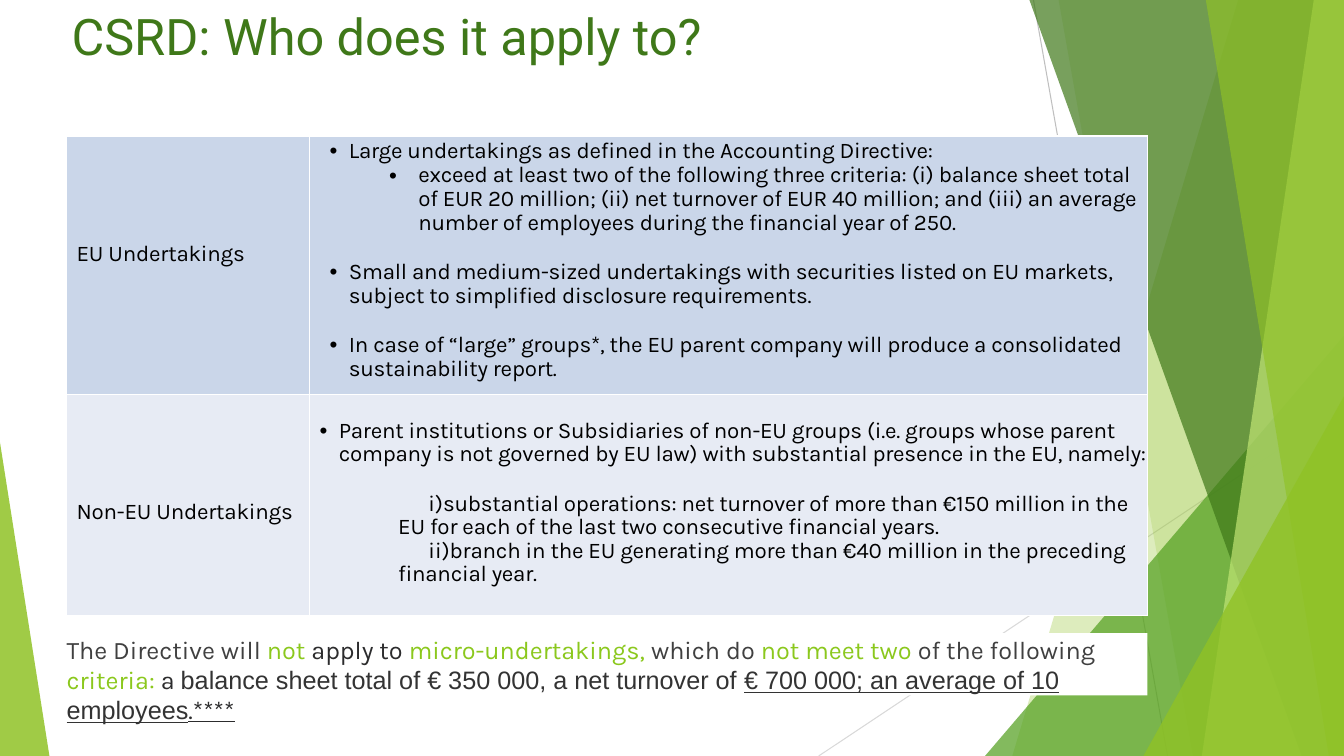
from dataclasses import dataclass

from lxml.etree import SubElement
from pptx import Presentation
from pptx.dml.color import RGBColor
from pptx.enum.shapes import MSO_CONNECTOR, MSO_SHAPE
from pptx.enum.text import MSO_ANCHOR, PP_ALIGN
from pptx.oxml.ns import qn
from pptx.util import Inches, Pt

WIDTH, HEIGHT = 13.33, 7.5
GREEN, DARK_GREEN, LIME = "90C226", "3F7819", "8BC81D"
GREY, CHARCOAL, SLATE = "404040", "2C2C2D", "333333"


@dataclass
class Ray:
    start: tuple[float, float]
    end: tuple[float, float]
    color: str


@dataclass
class Panel:
    """Band from a slanted left edge to the right side of the slide."""
    top_x: float
    bottom_x: float
    color: str
    opacity: int


@dataclass
class Wedge:
    """Triangle standing on the bottom of the slide."""
    left: float
    top: float
    width: float
    apex: float
    color: str
    opacity: int


@dataclass
class Item:
    text: str
    left: float = 0.1
    indent: float = 0
    before: float = 0
    line: float | None = None
    bullet: str = ""


@dataclass
class Cell:
    items: list[Item]
    top: float = 0
    bottom: float = 0
    anchor: MSO_ANCHOR = MSO_ANCHOR.TOP


@dataclass
class Span:
    text: str
    color: str
    font: str = "Karla"
    underline: bool = False


RAYS = [Ray((10.25, 0), (11.58, HEIGHT), "BFBFBF"),
        Ray((WIDTH, 4.03), (8.12, HEIGHT), "D9D9D9")]
DECORATION = [
    Panel(12.28, 10.04, GREEN, 30),
    Panel(10.5, 11.83, GREEN, 20),
    Wedge(9.77, 3.33, 3.56, 1, "54A021", 72),
    Panel(10.21, 12.91, DARK_GREEN, 70),
    Panel(13.03, 11.92, "C0E474", 70),
    Panel(11.96, 13.18, GREEN, 65),
    Wedge(11.34, 3.93, 1.99, 1, GREEN, 80),
    Wedge(0, 4.39, 0.49, 0, GREEN, 85),
]

COLUMNS, ROWS = [2.41, 8.31], [2.56, 2.2]
ROW_FILLS = ["CAD6E9", "E7EBF4"]
GAP = 18.6
CELLS = [
    [Cell([Item("EU Undertakings")], bottom=0.22, anchor=MSO_ANCHOR.MIDDLE),
     Cell([
         Item("Large undertakings as defined in the Accounting Directive:",
              0.39, -0.19, 0, 17.1, "•"),
         Item("exceed at least two of the following three criteria: (i) balance sheet total of "
              "EUR 20 million; (ii) net turnover of EUR 40 million; and (iii) an average number "
              "of employees during the financial year of 250.", 1.08, -0.29, 0.8, 16.8, "•"),
         Item("Small and medium-sized undertakings with securities listed on EU markets, "
              "subject to simplified disclosure requirements.", 0.39, -0.19, GAP, 16.8, "•"),
         Item("In case of “large” groups*, the EU parent company will produce a consolidated "
              "sustainability report.", 0.39, -0.19, GAP, 16.8, "•"),
     ], top=0.04)],
    [Cell([Item("Non-EU Undertakings")], top=0.14, anchor=MSO_ANCHOR.MIDDLE),
     Cell([
         Item("Parent institutions or Subsidiaries of non-EU groups (i.e. groups whose parent "
              "company is not governed by EU law) with substantial presence in the EU, namely:",
              0.29, -0.19, 0, 16.8, "•"),
         Item("substantial operations: net turnover of more than €150 million in the EU for "
              "each of the last two consecutive financial years.", 0.88, 0.3, GAP, 16.8, "i)"),
         Item("branch in the EU generating more than €40 million in the preceding financial "
              "year.", 0.88, 0.3, 0, 16.8, "i)"),
     ], top=0.26)],
]

NOTE = [
    Span("The Directive will ", GREY), Span("not ", LIME), Span("apply to ", CHARCOAL),
    Span("micro-undertakings, ", LIME), Span("which do ", GREY), Span("not meet two ", LIME),
    Span("of the following ", GREY), Span("criteria: ", LIME), Span("a ", CHARCOAL),
    Span("balance sheet total of € 350 000, a net turnover of ", SLATE, "Arial"),
    Span("€ 700 000; an average of 10 employees", SLATE, "Arial", True),
    Span(".****", CHARCOAL, underline=True),
]


def rgb(color: str) -> RGBColor:
    return RGBColor.from_string(color)


def paint(shape, color: str, opacity: int = 100) -> None:
    shape.shadow.inherit = False
    shape.fill.solid()
    shape.fill.fore_color.rgb = rgb(color)
    if opacity < 100:
        tint = shape._element.spPr.find(".//" + qn("a:srgbClr"))
        SubElement(tint, qn("a:alpha"), val=str(opacity * 1000))
    shape.line.fill.background()


def draw_ray(page, ray: Ray) -> None:
    line = page.shapes.add_connector(MSO_CONNECTOR.STRAIGHT, *map(Inches, ray.start + ray.end))
    line.line.color.rgb = rgb(ray.color)
    line.line.width = Pt(0.75)
    SubElement(line._element.spPr, qn("a:effectLst"))


def draw_panel(page, panel: Panel) -> None:
    builder = page.shapes.build_freeform(Inches(panel.top_x), 0)
    corners = [(WIDTH, 0), (WIDTH, HEIGHT), (panel.bottom_x, HEIGHT)]
    builder.add_line_segments([(Inches(x), Inches(y)) for x, y in corners])
    paint(builder.convert_to_shape(), panel.color, panel.opacity)


def draw_wedge(page, wedge: Wedge) -> None:
    shape = page.shapes.add_shape(MSO_SHAPE.ISOSCELES_TRIANGLE, Inches(wedge.left),
                                  Inches(wedge.top), Inches(wedge.width),
                                  Inches(HEIGHT - wedge.top))
    shape.adjustments[0] = wedge.apex
    paint(shape, wedge.color, wedge.opacity)


def set_frame(frame, left: float, top: float) -> None:
    frame.word_wrap = True
    frame.vertical_anchor = MSO_ANCHOR.TOP
    frame.margin_left, frame.margin_top = Inches(left), Inches(top)
    frame.margin_right = frame.margin_bottom = 0


def write_item(para, item: Item) -> None:
    properties = para._p.get_or_add_pPr()
    properties.set("marL", str(Inches(item.left)))
    properties.set("indent", str(Inches(item.indent)))
    para.space_before = Pt(item.before)
    if item.line:
        para.line_spacing = Pt(item.line)
    if item.bullet == "i)":
        SubElement(properties, qn("a:buAutoNum"), type="romanLcParenR")
    elif item.bullet:
        SubElement(properties, qn("a:buFont"), typeface="Arial")
        SubElement(properties, qn("a:buChar"), char=item.bullet)
    para.font.name, para.font.size = "Karla", Pt(16)
    para.font.color.rgb = rgb("000000")
    span = para.add_run()
    span.text = item.text
    span._r.get_or_add_rPr().set("spc", "-15")


def fill_cell(target, cell: Cell, color: str) -> None:
    target.margin_left = target.margin_right = 0
    target.margin_top, target.margin_bottom = Inches(cell.top), Inches(cell.bottom)
    target.vertical_anchor = cell.anchor
    for side in ("a:lnL", "a:lnR", "a:lnT", "a:lnB"):
        border = SubElement(target._tc.get_or_add_tcPr(), qn(side), w=str(Pt(1)))
        SubElement(SubElement(border, qn("a:solidFill")), qn("a:srgbClr"), val="FFFFFF")
    target.fill.solid()
    target.fill.fore_color.rgb = rgb(color)
    frame = target.text_frame
    for index, item in enumerate(cell.items):
        write_item(frame.add_paragraph() if index else frame.paragraphs[0], item)


def draw_table(page) -> None:
    table = page.shapes.add_table(len(ROWS), len(COLUMNS), Inches(0.66), Inches(1.35),
                                  Inches(sum(COLUMNS)), Inches(sum(ROWS))).table
    table.first_row = table.horz_banding = False
    for column, width in zip(table.columns, COLUMNS):
        column.width = Inches(width)
    for row, height, cells, color in zip(table.rows, ROWS, CELLS, ROW_FILLS):
        row.height = Inches(height)
        for target, cell in zip(row.cells, cells):
            fill_cell(target, cell, color)


def draw_title(page) -> None:
    box = page.shapes.add_textbox(Inches(0.01), 0, Inches(11.62), Inches(0.66))
    set_frame(box.text_frame, 0.7, 0.05)
    para = box.text_frame.paragraphs[0]
    para.text = "CSRD: Who does it apply to?"
    para.font.name, para.font.size = "Roboto", Pt(36)
    para.font.color.rgb = rgb(DARK_GREEN)


def draw_note(page) -> None:
    box = page.shapes.add_shape(MSO_SHAPE.RECTANGLE, Inches(0.66), Inches(6.28),
                                Inches(10.72), Inches(0.62))
    paint(box, "FFFFFF")
    set_frame(box.text_frame, 0, 0.01)
    para = box.text_frame.paragraphs[0]
    para.alignment = PP_ALIGN.LEFT
    para.space_before = Pt(1.1)
    para.font.size = Pt(18)
    for part in NOTE:
        span = para.add_run()
        span.text = part.text
        span.font.name = part.font
        span.font.color.rgb = rgb(part.color)
        if part.underline:
            span.font.underline = True


def main() -> None:
    deck = Presentation()
    deck.slide_width, deck.slide_height = Inches(WIDTH), Inches(HEIGHT)
    page = deck.slides.add_slide(deck.slide_layouts[6])
    # Background decoration
    for ray in RAYS:
        draw_ray(page, ray)
    for part in DECORATION:
        draw = draw_panel if isinstance(part, Panel) else draw_wedge
        draw(page, part)
    # Content
    draw_title(page)
    draw_note(page)
    draw_table(page)
    deck.save("out.pptx")


if __name__ == "__main__":
    main()
